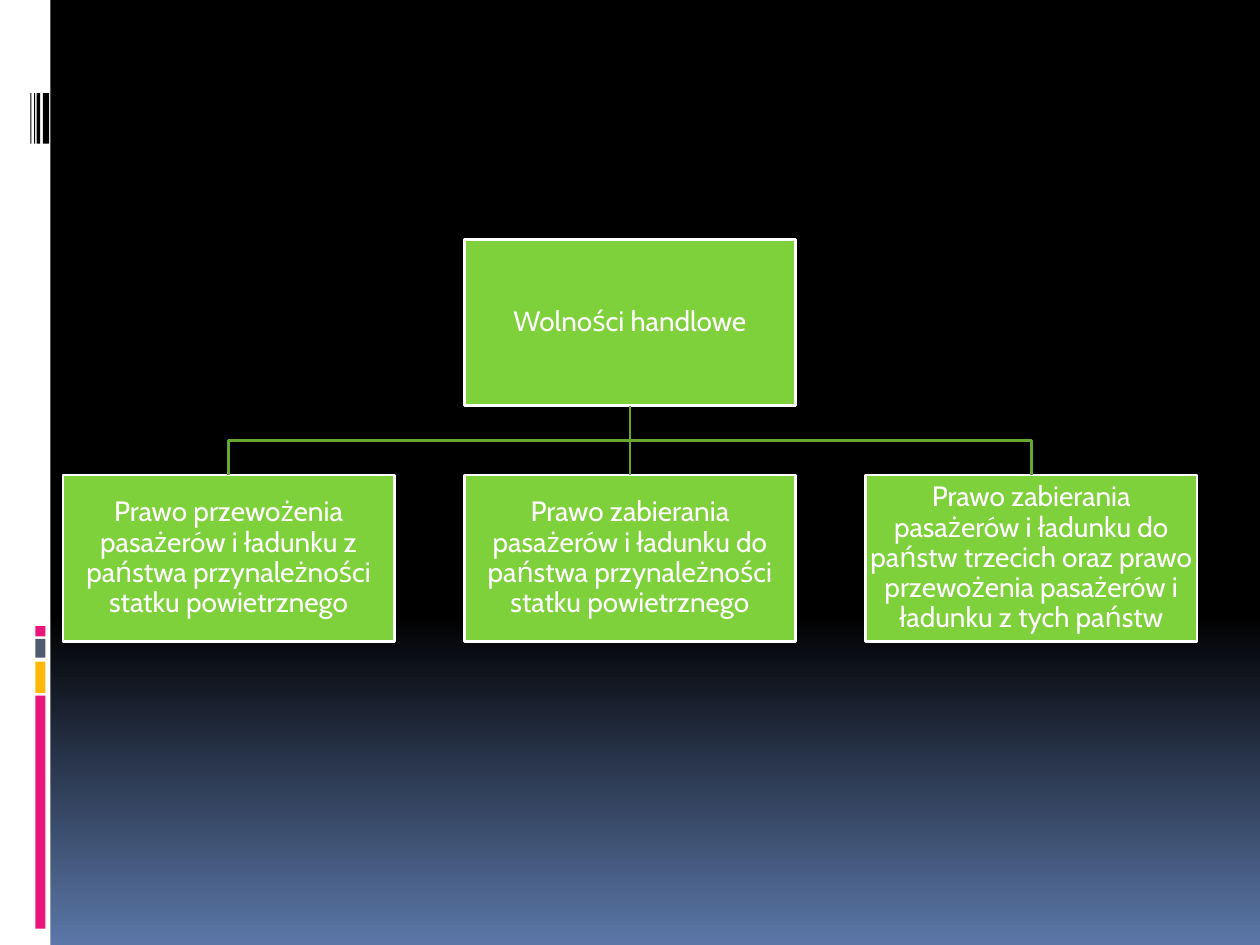
from lxml import etree
from pptx import Presentation
from pptx import util as u
from pptx.dml.color import RGBColor
from pptx.enum import shapes, text
from pptx.oxml.ns import qn

theme = {
    "white": RGBColor.from_string("FFFFFF"),
    "black": RGBColor.from_string("000000"),
    "blue": RGBColor.from_string("5B77A8"),
    "pink": RGBColor.from_string("EA157A"),
    "yellow": RGBColor.from_string("FEB80A"),
    "slate": RGBColor.from_string("4E5B6F"),
    "green": RGBColor.from_string("7FD13B"),
    "dark green": RGBColor.from_string("66A72F"),
    "font": "Cabin",
    "text size": u.Pt(16),
    "line width": u.Pt(1.5),
}

presentation = Presentation()
presentation.slide_width = u.Inches(10)
presentation.slide_height = u.Inches(7.5)
slide = presentation.slides.add_slide(presentation.slide_layouts[6])

background = slide.background.fill
background.gradient()
background.gradient_angle = 270
for stop, position, color in zip(background.gradient_stops, (0.65, 1), ("black", "blue")):
    stop.position = position
    stop.color.rgb = theme[color]


def add_rectangle(left, top, width, height, color):
    shape = slide.shapes.add_shape(
        shapes.MSO_SHAPE.RECTANGLE, *map(u.Inches, (left, top, width, height))
    )
    shape.shadow.inherit = False
    shape.fill.solid()
    shape.fill.fore_color.rgb = theme[color]
    shape.line.fill.background()
    return shape


def format_line(shape, color):
    shape.line.color.rgb = theme[color]
    shape.line.width = theme["line width"]


add_rectangle(0, 0, 0.4, 7.5, "white")
for top, height, color in (
    (5.52, 1.85, "pink"),
    (5.25, 0.25, "yellow"),
    (5.07, 0.15, "slate"),
    (4.97, 0.08, "pink"),
):
    add_rectangle(0.28, top, 0.08, height, color)
for left, width in ((0.34, 0.05), (0.29, 0.03), (0.27, 0.01), (0.24, 0.01)):
    add_rectangle(left, 0.74, width, 0.4, "black")

margin, chart_top = 0.5, 1.9
box_width, box_height, row_gap = 2.63, 1.32, 0.55
column_step = (10 - 2 * margin - box_width) / 2
row_step = box_height + row_gap

boxes = []
for column, row, label in (
    (1, 0, "Wolności handlowe"),
    (0, 1, "Prawo przewożenia pasażerów i ładunku z państwa przynależności statku powietrznego"),
    (1, 1, "Prawo zabierania pasażerów i ładunku do państwa przynależności statku powietrznego"),
    (2, 1, "Prawo zabierania pasażerów i ładunku do państw trzecich oraz prawo "
           "przewożenia pasażerów i ładunku z tych państw"),
):
    box = add_rectangle(
        margin + column * column_step, chart_top + row * row_step, box_width, box_height, "green"
    )
    format_line(box, "white")
    frame_format = {"word_wrap": True, "vertical_anchor": text.MSO_ANCHOR.MIDDLE}
    for side in ("left", "top", "right", "bottom"):
        frame_format[f"margin_{side}"] = u.Inches(0.01)
    for name, value in frame_format.items():
        setattr(box.text_frame, name, value)
    paragraph = box.text_frame.paragraphs[0]
    paragraph.text = label
    paragraph.alignment = text.PP_ALIGN.CENTER
    paragraph.line_spacing = 0.9
    for name, value in {"name": theme["font"], "size": theme["text size"]}.items():
        setattr(paragraph.font, name, value)
    paragraph.font.color.rgb = theme["white"]
    boxes.append(box)

root, left_box, middle_box, right_box = boxes
root_x = root.left + root.width // 2
root_bottom = root.top + root.height
branch_y = (root_bottom + left_box.top) // 2

for box in (left_box, right_box):
    box_x = box.left + box.width // 2
    builder = slide.shapes.build_freeform(root_x, root_bottom)
    builder.add_line_segments(
        [(root_x, branch_y), (box_x, branch_y), (box_x, box.top)], close=False
    )
    branch = builder.convert_to_shape()
    branch.shadow.inherit = False
    branch.fill.background()
    format_line(branch, "dark green")

trunk = slide.shapes.add_connector(
    shapes.MSO_CONNECTOR.STRAIGHT, root_x, root_bottom, root_x, middle_box.top
)
trunk.begin_connect(root, 2)
trunk.end_connect(middle_box, 0)
format_line(trunk, "dark green")
etree.SubElement(trunk._element.spPr, qn("a:effectLst"))

presentation.save("out.pptx")
